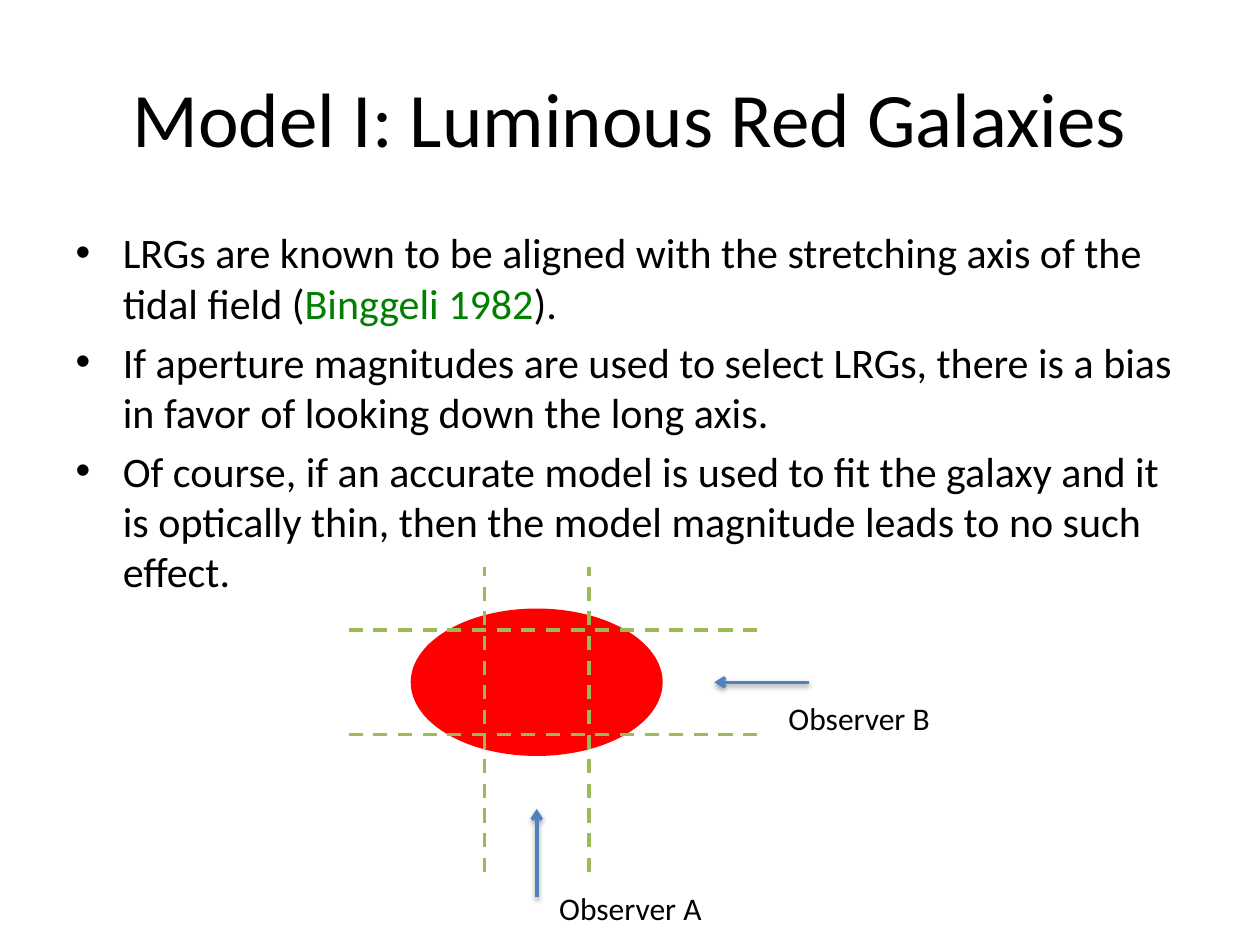
from lxml import etree
from pptx import Presentation
from pptx.dml.color import RGBColor
from pptx.enum.dml import MSO_LINE
from pptx.enum.shapes import MSO_CONNECTOR, MSO_SHAPE
from pptx.enum.text import MSO_ANCHOR, MSO_AUTO_SIZE, PP_ALIGN
from pptx.oxml.ns import qn
from pptx.util import Inches, Pt

STRAIGHT = MSO_CONNECTOR.STRAIGHT
OVAL = MSO_SHAPE.OVAL
DASH = MSO_LINE.DASH
MIDDLE = MSO_ANCHOR.MIDDLE
CENTER = PP_ALIGN.CENTER
FIT_SHAPE = MSO_AUTO_SIZE.SHAPE_TO_FIT_TEXT

BLACK = RGBColor(0x00, 0x00, 0x00)
RED = RGBColor(0xFF, 0x00, 0x00)
CITATION_GREEN = RGBColor(0x00, 0x80, 0x00)
APERTURE_GREEN = RGBColor(0x9B, 0xBB, 0x59)
ARROW_BLUE = RGBColor(0x4F, 0x81, 0xBD)
FONT = "Calibri"

BULLETS = [
    [("LRGs are known to be aligned with the stretching axis of the tidal field (", BLACK),
     ("Binggeli 1982", CITATION_GREEN), (").", BLACK)],
    [("If aperture magnitudes are used to select LRGs, there is a bias in favor "
      "of looking down the long axis.", BLACK)],
    [("Of course, if an accurate model is used to fit the galaxy and it is optically "
      "thin, then the model magnitude leads to no such effect.", BLACK)],
]


def place(shape, left, top, width, height):
    shape.left, shape.top = Inches(left), Inches(top)
    shape.width, shape.height = Inches(width), Inches(height)


def set_font(para, size):
    para.font.name = FONT
    para.font.size = Pt(size)


def add_title(page, box):
    title = page.shapes.title
    place(title, *box)
    title.text_frame.vertical_anchor = MIDDLE
    para = title.text_frame.paragraphs[0]
    para.text = "Model I: Luminous Red Galaxies"
    para.alignment = CENTER
    set_font(para, 44)
    para.font.color.rgb = BLACK


def add_bullets(page, box):
    body = page.placeholders[1]
    place(body, *box)
    frame = body.text_frame
    for index, spans in enumerate(BULLETS):
        para = frame.add_paragraph() if index else frame.paragraphs[0]
        set_font(para, 24)
        for text, color in spans:
            span = para.add_run()
            span.text = text
            span.font.color.rgb = color


def add_line(page, start, end, color):
    line = page.shapes.add_connector(STRAIGHT, *map(Inches, start + end))
    line.line.color.rgb = color
    line.line.width = Pt(2)
    effects = etree.SubElement(line._element.spPr, qn("a:effectLst"))
    return line, effects


def add_aperture_line(page, start, end):
    line, _ = add_line(page, start, end, APERTURE_GREEN)
    line.line.dash_style = DASH


def add_arrow(page, start, end):
    arrow, effects = add_line(page, start, end, ARROW_BLUE)
    etree.SubElement(arrow.line._get_or_add_ln(), qn("a:tailEnd"), type="arrow")
    shadow = etree.SubElement(
        effects, qn("a:outerShdw"), blurRad=str(Pt(3.1)), dist=str(Pt(1.6)),
        dir="5400000", rotWithShape="0")
    shade = etree.SubElement(shadow, qn("a:srgbClr"), val=str(BLACK))
    etree.SubElement(shade, qn("a:alpha"), val="38000")


def add_label(page, text, left, top):
    label = page.shapes.add_textbox(
        Inches(left), Inches(top), Inches(1.34), Inches(0.4))
    label.text_frame.word_wrap = False
    label.text_frame.auto_size = FIT_SHAPE
    para = label.text_frame.paragraphs[0]
    para.text = text
    set_font(para, 18)
    para.font.color.rgb = BLACK


def add_galaxy_diagram(page, box):
    left, top, width, height = box
    center_x, center_y = left + width / 2, top + height / 2
    galaxy = page.shapes.add_shape(OVAL, *map(Inches, box))
    galaxy.shadow.inherit = False
    galaxy.fill.solid()
    galaxy.fill.fore_color.rgb = RED
    galaxy.line.fill.background()

    add_arrow(page, (center_x, top + 2.29), (center_x, top + 1.59))
    add_label(page, "Observer A", center_x + 0.08, top + 2.18)
    add_arrow(page, (left + 3.16, center_y), (left + 2.41, center_y))
    add_label(page, "Observer B", left + 2.9, center_y + 0.08)

    half_aperture = 0.415
    for offset in (-half_aperture, half_aperture):
        y = center_y + offset
        add_aperture_line(page, (left + 2.75, y), (left - 0.5, y))
        x = center_x + offset
        add_aperture_line(page, (x, top + 2.09), (x, top - 0.33))


def main():
    deck = Presentation()
    deck.slide_width, deck.slide_height = Inches(10), Inches(7.5)
    page = deck.slides.add_slide(deck.slide_layouts[1])
    add_title(page, (0.5, 0.3, 9, 1.25))
    add_bullets(page, (0.5, 1.75, 9, 4.95))
    add_galaxy_diagram(page, (3.26, 4.83, 2, 1.17))
    deck.save("out.pptx")


if __name__ == "__main__":
    main()
